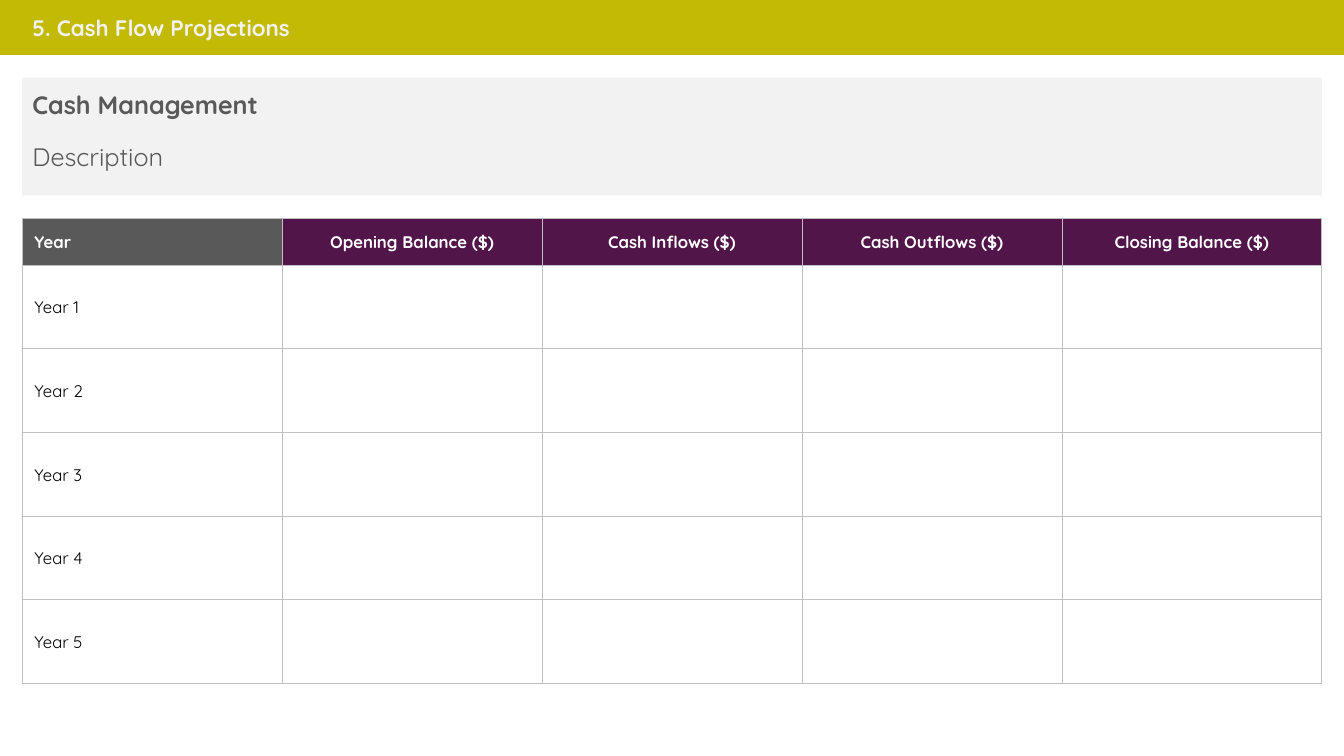
from lxml import etree
from pptx import Presentation
from pptx.dml.color import RGBColor
from pptx.enum.shapes import MSO_SHAPE
from pptx.enum.text import MSO_ANCHOR, MSO_AUTO_SIZE, PP_ALIGN
from pptx.oxml.ns import qn
from pptx.util import Inches, Pt

RECT = MSO_SHAPE.RECTANGLE
TOP, MIDDLE = MSO_ANCHOR.TOP, MSO_ANCHOR.MIDDLE
LEFT, CENTER = PP_ALIGN.LEFT, PP_ALIGN.CENTER
GROW = MSO_AUTO_SIZE.SHAPE_TO_FIT_TEXT

WIDE, HIGH = 13.33, 7.5
EDGE = 0.22
SPAN = WIDE - 2 * EDGE
LIME, PLUM, GRAY = "C3BA05", "51154A", "595959"
PALE, RULE, WHITE, BLACK = "F2F2F2", "BFBFBF", "FFFFFF", "000000"


def color(code):
    return RGBColor.from_string(code)


def write(para, text, size, code, bold, **form):
    """Put one styled run in a paragraph and set its paragraph format."""
    run = para.add_run()
    run.text = text
    for name, value in dict(name="Quicksand", size=Pt(size), bold=bold).items():
        setattr(run.font, name, value)
    run.font.color.rgb = color(code)
    for name, value in form.items():
        setattr(para, name, value)


deck = Presentation()
deck.slide_width, deck.slide_height = Inches(WIDE), Inches(HIGH)
slide = deck.slides.add_slide(deck.slide_layouts[3])
shapes = slide.shapes
title, head, body = slide.placeholders

# Bands behind the text
bands = [
    (0, 0, WIDE, 0.54, LIME),
    (EDGE, 0.77, SPAN, 1.17, PALE),
]
for *box, code in bands:
    band = shapes.add_shape(RECT, *map(Inches, box))
    band.shadow.inherit = False
    band.fill.solid()
    band.fill.fore_color.rgb = color(code)
    if code == LIME:
        band.line.color.rgb = color(code)
        band.line.width = Pt(1.5)
    else:
        band.line.fill.background()
    title._element.addprevious(band._element)

# Title, heading and description
texts = [
    (title, (0.09, 8.08, 0.37), "5. Cash Flow Projections", 16, PALE, True, {}),
    (head, (0.84, 6.95, 0.4), "Cash Management", 18, GRAY, True, {}),
    (body, (1.31, 11.5, 0.43), "Description", 18, GRAY, False,
     dict(line_spacing=1.15, space_after=Pt(8))),
]
for holder, (top, wide, high), text, size, code, bold, form in texts:
    holder.left, holder.top = Inches(EDGE), Inches(top)
    holder.width, holder.height = Inches(wide), Inches(high)
    frame = holder.text_frame
    for name, value in dict(word_wrap=True, auto_size=GROW,
                            vertical_anchor=TOP).items():
        setattr(frame, name, value)
    para = frame.paragraphs[0]
    write(para, text, size, code, bold,
          **{"alignment": LEFT, "space_before": Pt(0), **form})
    props = para._p.get_or_add_pPr()
    props.set("marL", "0")
    props.set("indent", "0")
    etree.SubElement(props, qn("a:buNone"))

# Cash flow table
heads = ["Year"] + [f"{name} ($)" for name in (
    "Opening Balance", "Cash Inflows", "Cash Outflows", "Closing Balance")]
rows = [heads] + [[f"Year {n}"] + [""] * 4 for n in range(1, 6)]
table = shapes.add_table(len(rows), len(heads), Inches(EDGE), Inches(2.17),
                         Inches(SPAN), Inches(4.6)).table
for col in table.columns:
    col.width = Inches(SPAN / len(heads))
for r, row in enumerate(rows):
    table.rows[r].height = Inches(0.83 if r else 0.46)
    for c, text in enumerate(row):
        cell = table.cell(r, c)
        cell.fill.solid()
        cell.fill.fore_color.rgb = color(WHITE if r else PLUM if c else GRAY)
        for name, value in dict(
                vertical_anchor=MIDDLE, margin_left=Inches(0.01 if c else 0.12),
                margin_right=Inches(0.01), margin_top=Inches(0.01),
                margin_bottom=0).items():
            setattr(cell, name, value)
        if text:
            write(cell.text_frame.paragraphs[0], text, 12,
                  BLACK if r else WHITE, r == 0, alignment=CENTER if c else LEFT)
        props = cell._tc.get_or_add_tcPr()
        for n, side in enumerate("LRTB"):
            line = etree.Element(qn(f"a:ln{side}"), w=str(Pt(0.5)))
            fill = etree.SubElement(line, qn("a:solidFill"))
            etree.SubElement(fill, qn("a:srgbClr"), val=RULE)
            props.insert(n, line)

deck.save("out.pptx")
